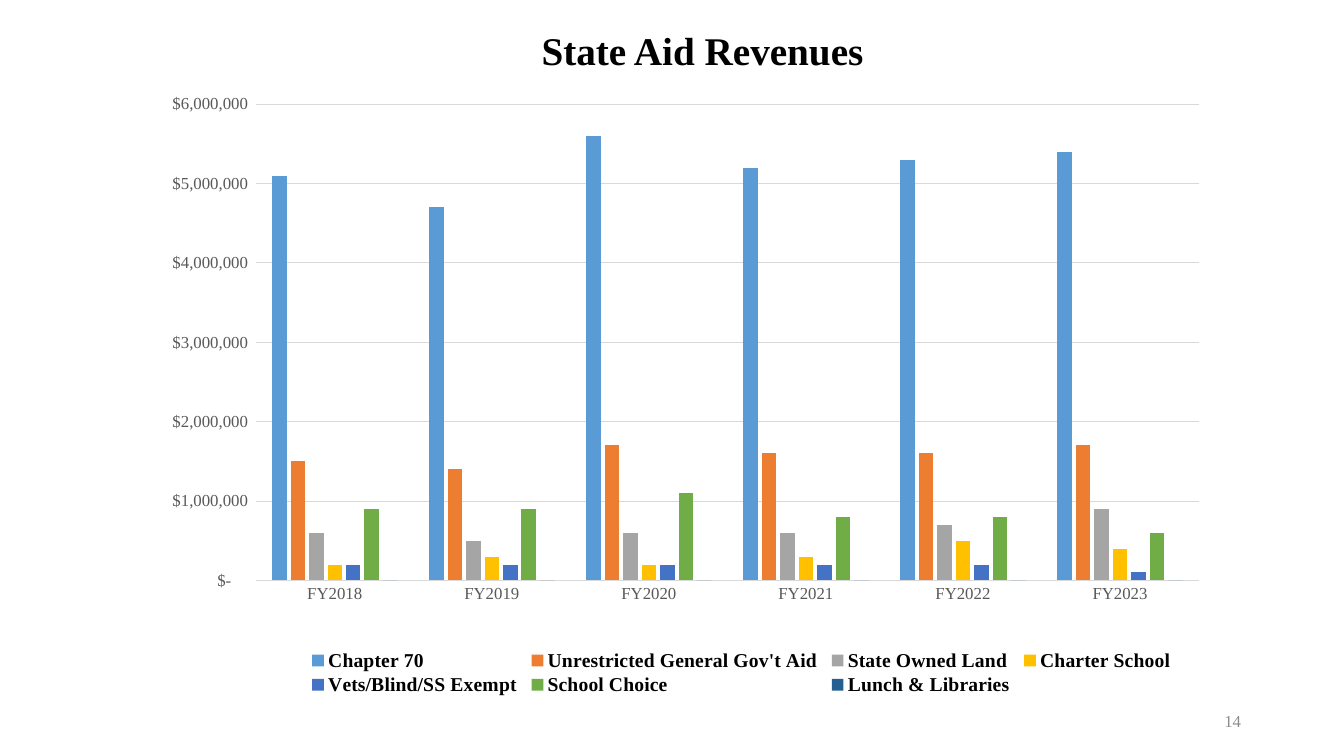
from lxml.etree import SubElement
from pptx import Presentation
from pptx.chart.data import CategoryChartData
from pptx.dml.color import RGBColor
from pptx.enum.chart import XL_CHART_TYPE as ChartType, XL_LEGEND_POSITION as LegendSpot
from pptx.enum.chart import XL_TICK_MARK as TickMark
from pptx.enum.text import MSO_ANCHOR as Anchor, PP_ALIGN as Align
from pptx.oxml.ns import qn
from pptx.util import Emu, Pt

SCALE = 914400 / 100.8
FACE = "Times New Roman"
COLORS = {
    "ink": "000000",
    "axis": "595959",
    "grid": "D9D9D9",
    "number": "8C8C8C",
    "Chapter 70": "5B9BD5",
    "Unrestricted General Gov't Aid": "ED7D31",
    "State Owned Land": "A5A5A5",
    "Charter School": "FFC000",
    "Vets/Blind/SS Exempt": "4472C4",
    "School Choice": "70AD47",
    "Lunch & Libraries": "255E91",
}
YEARS = [f"FY{year}" for year in range(2018, 2024)]
REVENUES = {
    "Chapter 70": [5100000, 4700000, 5600000, 5200000, 5300000, 5400000],
    "Unrestricted General Gov't Aid": [1500000, 1400000, 1700000, 1600000, 1600000, 1700000],
    "State Owned Land": [600000, 500000, 600000, 600000, 700000, 900000],
    "Charter School": [200000, 300000, 200000, 300000, 500000, 400000],
    "Vets/Blind/SS Exempt": [200000, 200000, 200000, 200000, 200000, 100000],
    "School Choice": [900000, 900000, 1100000, 800000, 800000, 600000],
    "Lunch & Libraries": [0, 0, 0, 0, 0, 0],
}
DOLLARS = '_("$"* #,##0_);_("$"* \\(#,##0\\);_("$"* "-"??_);_(@_)'


def px(*lengths):
    return [Emu(round(length * SCALE)) for length in lengths]


def set_font(font, size, color, bold=False):
    font.name = FACE
    font.size = Pt(size)
    font.bold = bold
    font.color.rgb = RGBColor.from_string(COLORS[color])


deck = Presentation()
deck.slide_width, deck.slide_height = px(1344, 756)
page = deck.slides.add_slide(deck.slide_layouts[5])

title = page.shapes.title
title.left, title.top, title.width, title.height = px(176, 19, 1053, 67)
title.text_frame.text = "State Aid Revenues"
title.text_frame.vertical_anchor = Anchor.MIDDLE
para = title.text_frame.paragraphs[0]
para.alignment = Align.CENTER
para.line_spacing = 0.9
set_font(para.font, 28, "ink", True)

data = CategoryChartData(number_format=DOLLARS)
data.categories = YEARS
for name, values in REVENUES.items():
    data.add_series(name, values)
chart = page.shapes.add_chart(ChartType.COLUMN_CLUSTERED, *px(155, 94, 1066, 636), data).chart
chart.has_title = False
set_font(chart.font, 10, "ink")

plot = chart.plots[0]
plot.gap_width = 219
plot.overlap = -27
plot.vary_by_categories = False
for series in plot.series:
    series.format.fill.solid()
    series.format.fill.fore_color.rgb = RGBColor.from_string(COLORS[series.name])
    series.invert_if_negative = False

years, amounts = chart.category_axis, chart.value_axis
for axis in (years, amounts):
    axis.major_tick_mark = axis.minor_tick_mark = TickMark.NONE
    set_font(axis.tick_labels.font, 12, "axis")
amounts.minimum_scale, amounts.maximum_scale, amounts.major_unit = 0, 6000000, 1000000
amounts.tick_labels.number_format = DOLLARS
amounts.tick_labels.number_format_is_linked = False
amounts.format.line.fill.background()
for line in (years.format.line, amounts.major_gridlines.format.line):
    line.color.rgb = RGBColor.from_string(COLORS["grid"])
    line.width = Pt(0.75)

chart.has_legend = True
legend = chart.legend
legend.position = LegendSpot.BOTTOM
legend.include_in_layout = False
set_font(legend.font, 14, "ink", True)

plot_area = chart.element.find(".//" + qn("c:plotArea"))
legend_area = chart.element.find(".//" + qn("c:legend"))
for area, place, frame in (
    (plot_area, 0, (0.095, 0.016, 0.884, 0.749)),
    (legend_area, 1, (0.14, 0.87, 0.82, 0.08)),
):
    for old in area.findall(qn("c:layout")):
        area.remove(old)
    layout = SubElement(area, qn("c:layout"))
    area.insert(place, layout)
    manual = SubElement(layout, qn("c:manualLayout"))
    if area is plot_area:
        SubElement(manual, qn("c:layoutTarget")).set("val", "inner")
    for side in "xy":
        SubElement(manual, qn(f"c:{side}Mode")).set("val", "edge")
    for side, share in zip("xywh", frame):
        SubElement(manual, qn(f"c:{side}")).set("val", str(share))

number_box = page.shapes.add_textbox(*px(949, 701, 302, 40))
number_box.text_frame.word_wrap = True
number_box.text_frame.vertical_anchor = Anchor.MIDDLE
para = number_box.text_frame.paragraphs[0]
para.text = "14"
para.alignment = Align.RIGHT
set_font(para.font, 12, "number")

deck.save("out.pptx")
